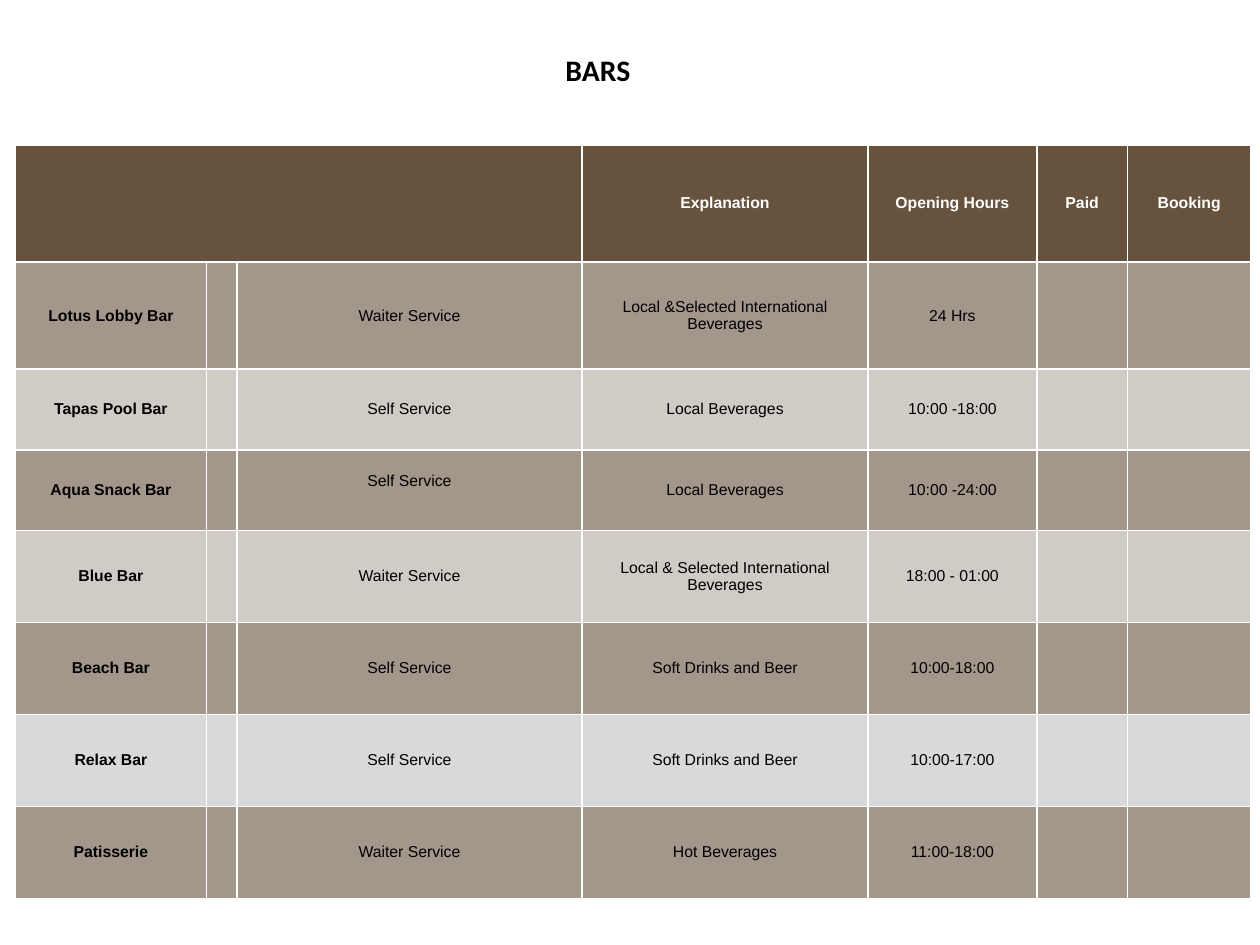
"""Build the slide listing the bars with their service, drinks and hours."""
from lxml import etree
from pptx import Presentation
from pptx.dml.color import RGBColor
from pptx.enum.text import MSO_ANCHOR, PP_ALIGN
from pptx.oxml.ns import qn
from pptx.util import Inches, Pt

CENTER = PP_ALIGN.CENTER
MIDDLE = MSO_ANCHOR.MIDDLE
BROWN, TAUPE, SAND, GREY = "66523D", "A3978B", "D1CBC5", "D9D9D9"
WHITE, BLACK = "FFFFFF", "000000"

COL_WIDTHS = [1.52, 0.23, 2.74, 2.27, 1.34, 0.72, 0.98]
ROW_HEIGHTS = [0.93, 0.85, 0.64, 0.64, 0.73, 0.73, 0.73, 0.73]
ROW_FILLS = [BROWN, TAUPE, SAND, TAUPE, SAND, TAUPE, GREY, TAUPE]
ROWS = [
    ["", "", "", "Explanation", "Opening Hours", "Paid", "Booking"],
    ["Lotus Lobby Bar", "", "Waiter Service",
     "Local &Selected International Beverages", "24 Hrs", "", ""],
    ["Tapas Pool Bar", "", "Self Service", "Local Beverages", "10:00 -18:00", "", ""],
    ["Aqua Snack Bar", "", "Self Service", "Local Beverages", "10:00 -24:00", "", ""],
    ["Blue Bar", "", "Waiter Service",
     "Local & Selected International Beverages", "18:00 - 01:00", "", ""],
    ["Beach Bar", "", "Self Service", "Soft Drinks and Beer", "10:00-18:00", "", ""],
    ["Relax Bar", "", "Self Service", "Soft Drinks and Beer", "10:00-17:00", "", ""],
    ["Patisserie", "", "Waiter Service", "Hot Beverages", "11:00-18:00", "", ""],
]


def rgb(color):
    return RGBColor.from_string(color)


def add_text(tf, text, font, size, color, bold):
    p = tf.paragraphs[0]
    p.alignment = CENTER
    r = p.add_run()
    r.text = text
    r.font.name = font
    r.font.size = Pt(size)
    r.font.bold = bold
    r.font.color.rgb = rgb(color)


prs = Presentation()
prs.slide_width = Inches(10)
prs.slide_height = Inches(7.5)
s = prs.slides.add_slide(prs.slide_layouts[6])

table = s.shapes.add_table(
    len(ROWS), len(COL_WIDTHS), Inches(0.12), Inches(1.15),
    Inches(sum(COL_WIDTHS)), Inches(sum(ROW_HEIGHTS))).table
for col, width in zip(table.columns, COL_WIDTHS):
    col.width = Inches(width)
for row, height in zip(table.rows, ROW_HEIGHTS):
    row.height = Inches(height)

for i, (texts, fill) in enumerate(zip(ROWS, ROW_FILLS)):
    for j, text in enumerate(texts):
        cell = table.cell(i, j)
        cell.vertical_anchor = MIDDLE
        tcPr = cell._tc.get_or_add_tcPr()
        for side in ("a:lnL", "a:lnR", "a:lnT", "a:lnB"):
            ln = etree.SubElement(tcPr, qn(side), w=str(Pt(1)))
            solid = etree.SubElement(ln, qn("a:solidFill"))
            etree.SubElement(solid, qn("a:srgbClr"), val=WHITE)
        cell.fill.solid()
        cell.fill.fore_color.rgb = rgb(fill)
        if text:
            header = i == 0
            add_text(cell.text_frame, text, "Arial", 9,
                     WHITE if header else BLACK, header or j == 0)
table.cell(0, 0).merge(table.cell(0, 2))
table.cell(3, 2).margin_bottom = Inches(0.2)

title = s.shapes.add_textbox(Inches(0), Inches(0.36), Inches(9.49), Inches(0.39))
title.text_frame.word_wrap = True
add_text(title.text_frame, "BARS", "Calibri", 17, BLACK, True)

prs.save("out.pptx")
